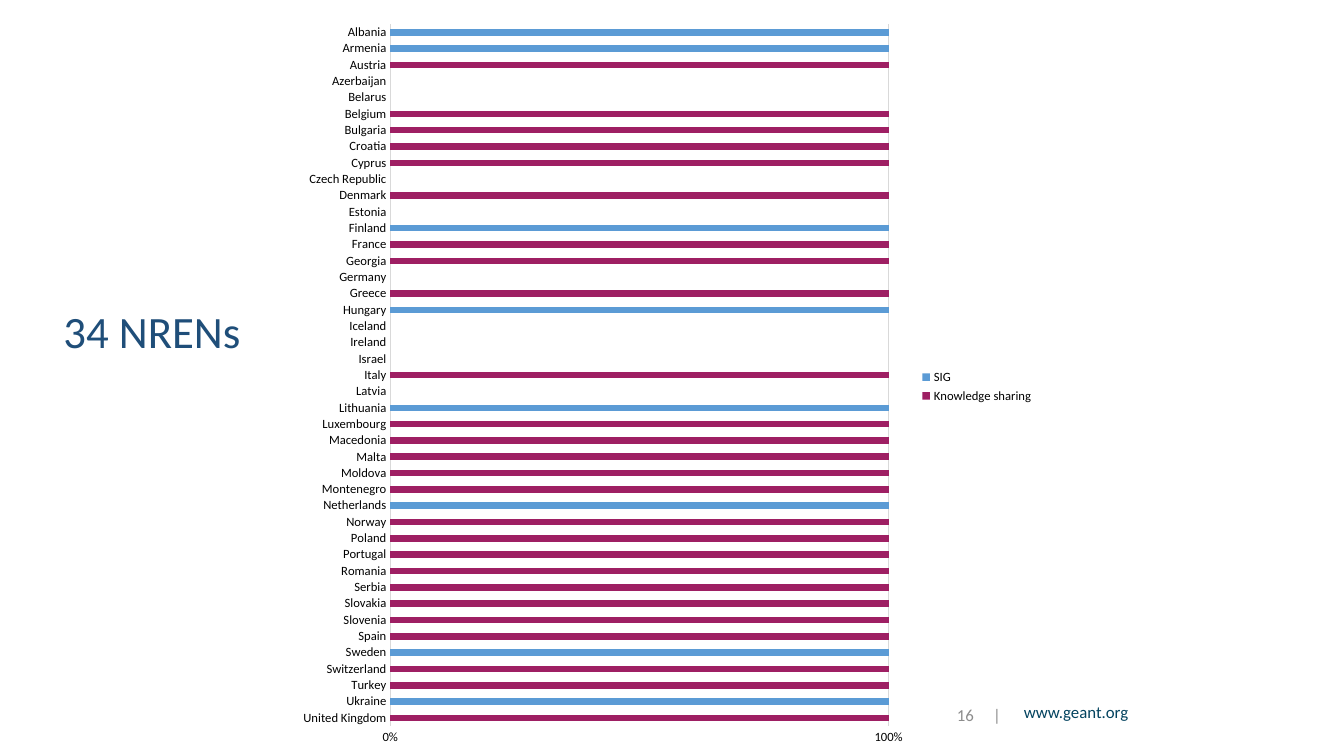
"""Build the slide charting how 34 NRENs take part in SIG and knowledge sharing."""
from lxml.etree import SubElement
from pptx import Presentation
from pptx.chart.data import CategoryChartData
from pptx.dml.color import RGBColor
from pptx.enum.chart import XL_CHART_TYPE, XL_LEGEND_POSITION, XL_TICK_MARK
from pptx.enum.text import MSO_ANCHOR, PP_ALIGN
from pptx.oxml.ns import qn
from pptx.util import Inches, Pt

FONT = "Calibri"
COLORS = {
    "title": "1F4E79", "site": "03435F", "page": "8C8C8C", "text": "000000",
    "grid": "D9D9D9", "SIG": "5B9BD5", "Knowledge sharing": "9E1F63",
}
COUNTRIES = [
    "Albania", "Armenia", "Austria", "Azerbaijan", "Belarus", "Belgium", "Bulgaria",
    "Croatia", "Cyprus", "Czech Republic", "Denmark", "Estonia", "Finland", "France",
    "Georgia", "Germany", "Greece", "Hungary", "Iceland", "Ireland", "Israel", "Italy",
    "Latvia", "Lithuania", "Luxembourg", "Macedonia", "Malta", "Moldova", "Montenegro",
    "Netherlands", "Norway", "Poland", "Portugal", "Romania", "Serbia", "Slovakia",
    "Slovenia", "Spain", "Sweden", "Switzerland", "Turkey", "Ukraine", "United Kingdom",
]
SIG = {"Albania", "Armenia", "Finland", "Hungary", "Lithuania", "Netherlands",
       "Sweden", "Ukraine"}
ABSENT = {"Azerbaijan", "Belarus", "Czech Republic", "Estonia", "Germany", "Iceland",
          "Ireland", "Israel", "Latvia"}
MEMBERS = {"SIG": SIG, "Knowledge sharing": set(COUNTRIES) - SIG - ABSENT}
PLOT_AREA = {"x": 0.135, "y": 0.02, "w": 0.66, "h": 0.93}


def style_font(font, size, color):
    font.name, font.size = FONT, Pt(size)
    font.color.rgb = RGBColor.from_string(COLORS[color])


def style_line(line):
    line.color.rgb = RGBColor.from_string(COLORS["grid"])
    line.width = Pt(0.75)


def add_text(slide, box, text, size, color, align=PP_ALIGN.LEFT, tab=None):
    frame = slide.shapes.add_textbox(*map(Inches, box)).text_frame
    frame.word_wrap = True
    frame.text = text
    paragraph = frame.paragraphs[0]
    paragraph.alignment = align
    if tab:
        stops = SubElement(paragraph._p.get_or_add_pPr(), qn("a:tabLst"))
        SubElement(stops, qn("a:tab"), pos=str(Inches(tab)), algn="l")
    style_font(paragraph.runs[0].font, size, color)
    return frame


def place_plot(chart):
    plot_area = chart._chartSpace.chart.plotArea
    for old in plot_area.findall(qn("c:layout")):
        plot_area.remove(old)
    layout = SubElement(plot_area, qn("c:layout"))
    plot_area.insert(0, layout)
    manual = SubElement(layout, qn("c:manualLayout"))
    settings = {"layoutTarget": "inner", "xMode": "edge", "yMode": "edge", **PLOT_AREA}
    for key, value in settings.items():
        SubElement(manual, qn(f"c:{key}"), val=str(value))


def add_participation(slide):
    participation = CategoryChartData()
    participation.categories = COUNTRIES[::-1]
    for activity, members in MEMBERS.items():
        participation.add_series(
            activity, [100 if name in members else None for name in COUNTRIES[::-1]])
    chart = slide.shapes.add_chart(
        XL_CHART_TYPE.BAR_STACKED_100, Inches(2.86), Inches(0.09),
        Inches(7.49), Inches(7.49), participation).chart
    chart.has_title = False
    style_font(chart.font, 10, "text")
    place_plot(chart)

    plot = chart.plots[0]
    plot.gap_width, plot.overlap, plot.vary_by_categories = 150, 100, False
    for series in plot.series:
        series.format.fill.solid()
        series.format.fill.fore_color.rgb = RGBColor.from_string(COLORS[series.name])

    for axis in (chart.category_axis, chart.value_axis):
        axis.major_tick_mark = axis.minor_tick_mark = XL_TICK_MARK.NONE
        style_font(axis.tick_labels.font, 9, "text")
    style_line(chart.category_axis.format.line)
    percent = chart.value_axis
    percent.minimum_scale, percent.maximum_scale, percent.major_unit = 0, 1, 1
    percent.tick_labels.number_format = "0%"
    percent.tick_labels.number_format_is_linked = False
    percent.format.line.fill.background()
    style_line(percent.major_gridlines.format.line)

    chart.has_legend = True
    chart.legend.position = XL_LEGEND_POSITION.RIGHT
    chart.legend.include_in_layout = False
    style_font(chart.legend.font, 9, "text")


def main():
    deck = Presentation()
    deck.slide_width, deck.slide_height = Inches(13.33), Inches(7.5)
    slide = deck.slides.add_slide(deck.slide_layouts[6])
    add_text(slide, (9.61, 6.91, 1.68, 0.36), "www.geant.org", 12, "site", PP_ALIGN.RIGHT)
    page = add_text(slide, (9.29, 6.91, 0.73, 0.36), "16\t|", 12, "page", tab=0.36)
    page.vertical_anchor = MSO_ANCHOR.MIDDLE
    page.margin_left, page.margin_right = Inches(0.2), 0
    add_participation(slide)
    title = add_text(slide, (0.53, 3.02, 2.22, 0.71), "34 NRENs", 32, "title")
    title.paragraphs[0].line_spacing = 0.9
    deck.save("out.pptx")


if __name__ == "__main__":
    main()
